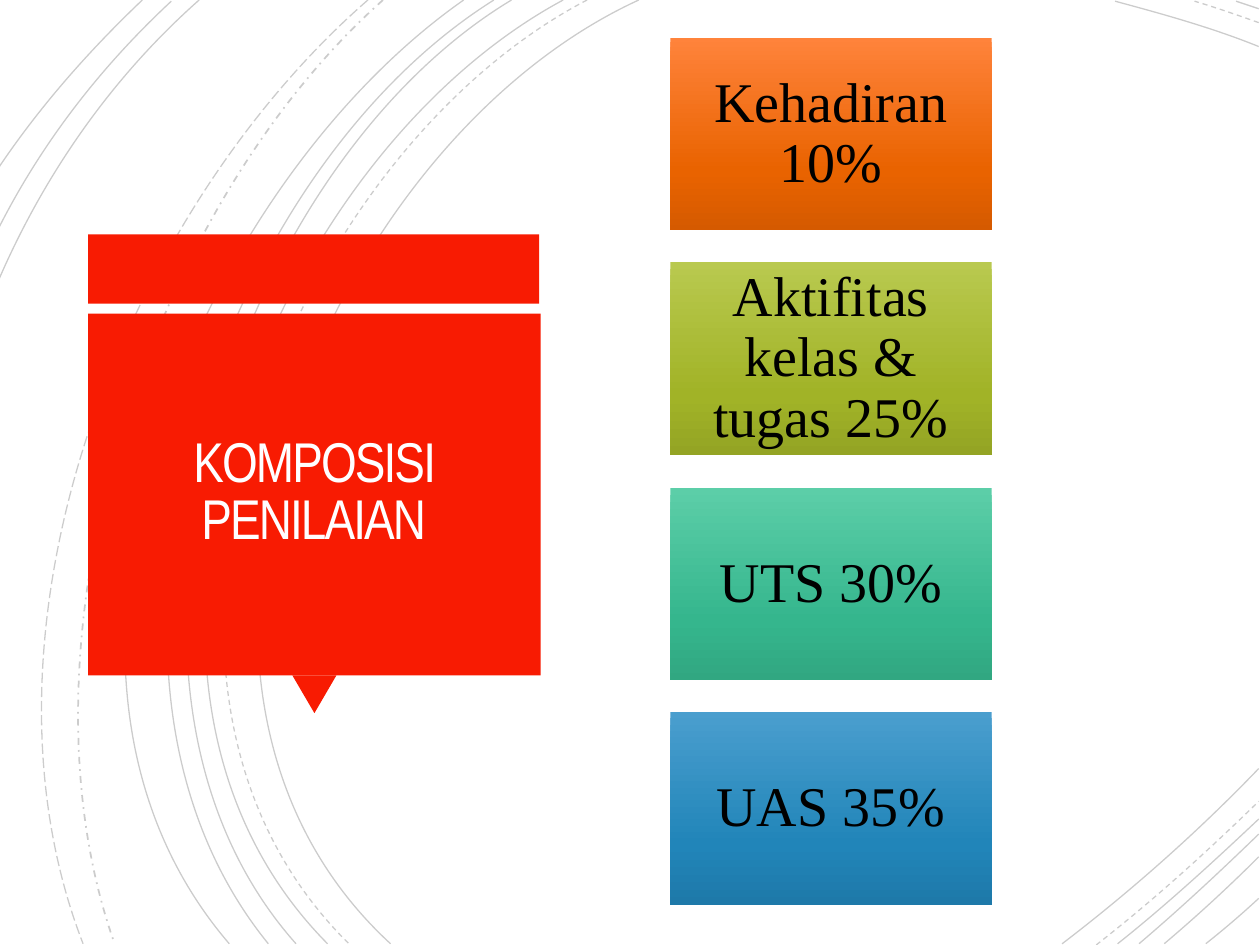
from copy import deepcopy

from lxml.etree import SubElement
from pptx import Presentation
from pptx.dml.color import RGBColor
from pptx.enum.dml import MSO_LINE
from pptx.enum.shapes import MSO_SHAPE
from pptx.enum.text import MSO_ANCHOR, PP_ALIGN
from pptx.oxml.ns import qn
from pptx.util import Pt

PX = 9144
COLORS = {"arc": "000000", "panel": "F81B02", "title": "FFFEFF", "text": "000000"}
SOLID, DASH = MSO_LINE.SOLID, MSO_LINE.DASH
DASH_DOT, LONG_DASH = MSO_LINE.DASH_DOT, MSO_LINE.LONG_DASH

ARCS = [
    (SOLID, 0.75, (507, 0), (256, 115), (83, 540), (310, 749)),
    (SOLID, 0.75, (999, 37), (962, 22), (922, 11), (885, 1)),
    (SOLID, 0.75, (843, 749), (898, 707), (951, 660), (999, 610)),
    (DASH, 0.75, (466, 0), (226, 125), (63, 538), (277, 749)),
    (DASH, 0.75, (999, 18), (982, 12), (965, 6), (948, 1)),
    (DASH, 0.75, (870, 750), (915, 715), (958, 676), (999, 636)),
    (SOLID, 0.75, (447, 0), (211, 127), (50, 537), (260, 749)),
    (SOLID, 0.75, (999, 7), (993, 5), (987, 3), (981, 1)),
    (SOLID, 0.75, (887, 749), (926, 718), (963, 684), (999, 650)),
    (SOLID, 0.75, (406, 0), (185, 133), (50, 541), (235, 749)),
    (SOLID, 0.75, (904, 749), (937, 721), (968, 692), (999, 662)),
    (SOLID, 0.75, (392, 0), (172, 138), (38, 534), (213, 749)),
    (SOLID, 0.75, (924, 749), (950, 727), (975, 704), (999, 680)),
    (SOLID, 0.75, (368, 0), (158, 147), (-7, 529), (182, 749)),
    (SOLID, 0.75, (957, 749), (971, 738), (985, 726), (999, 713)),
    (DASH_DOT, 1, (304, 0), (117, 166), (6, 509), (91, 749)),
    (LONG_DASH, 0.75, (292, 0), (98, 169), (-31, 499), (66, 749)),
    (SOLID, 0.75, (158, 0), (88, 62), (35, 139), (-1, 222)),
    (SOLID, 0.75, (136, 1), (79, 54), (33, 114), (-1, 181)),
    (SOLID, 0.75, (113, 0), (71, 40), (32, 84), (-1, 133)),
]
CARDS = [
    ("Kehadiran 10%", ("FF833B", "E96300", "D55A00")),
    ("Aktifitas kelas & tugas 25%", ("B9C94F", "A1B327", "94A424")),
    ("UTS 30%", ("5CCEA8", "35B68D", "31A781")),
    ("UAS 35%", ("4A9ECE", "2185B9", "1E79A9")),
]


class SlideBuilder:
    """Draws styled elements on the current slide, with lengths in px."""

    def __init__(self, slide):
        self.s = slide

    def arc(self, dash, width, start, *points):
        builder = self.s.shapes.build_freeform(*start, scale=PX)
        builder.add_line_segments(points, close=False)
        sp = builder.convert_to_shape()
        sp.shadow.inherit = False
        sp.fill.background()
        sp.line.color.rgb = RGBColor.from_string(COLORS["arc"])
        sp.line.width = Pt(width)
        sp.line.dash_style = dash
        color = sp._element.xpath(".//a:ln//a:srgbClr")[0]
        SubElement(color, qn("a:alpha")).set("val", "20000")
        path = sp._element.xpath(".//a:path")[0]
        curve = SubElement(path, qn("a:cubicBezTo"))
        for segment in path.findall(qn("a:lnTo")):
            curve.append(segment[0])
            path.remove(segment)

    def shape(self, kind, box, color=None, rotation=0):
        sp = self.s.shapes.add_shape(kind, *(v * PX for v in box))
        sp.shadow.inherit = False
        sp.line.fill.background()
        sp.rotation = rotation
        if color:
            sp.fill.solid()
            sp.fill.fore_color.rgb = RGBColor.from_string(color)
        return sp

    def text(self, sp, text, font, color, inset, spacing):
        tf = sp.text_frame
        frame = {"word_wrap": True, "vertical_anchor": MSO_ANCHOR.MIDDLE}
        for side in ("left", "right", "top", "bottom"):
            frame[f"margin_{side}"] = inset * PX
        for name, value in frame.items():
            setattr(tf, name, value)
        p = tf.paragraphs[0]
        p.alignment = PP_ALIGN.CENTER
        p.line_spacing = spacing
        r = p.add_run()
        r.text = text
        for name, value in {"name": font, "size": Pt(32)}.items():
            setattr(r.font, name, value)
        r.font.color.rgb = RGBColor.from_string(color)
        return r

    def title(self, box, text):
        sp = self.s.shapes.add_textbox(*(v * PX for v in box))
        r = self.text(sp, text, "Arial Narrow", COLORS["title"], 25, 0.85)
        r.font._element.set("spc", "-110")

    def card(self, box, text, colors):
        sp = self.shape(MSO_SHAPE.RECTANGLE, box)
        sp.fill.gradient()
        sp.fill.gradient_angle = 270
        stops = sp._element.xpath(".//a:gsLst")[0]
        stops.append(deepcopy(stops[-1]))
        for stop, position, color in zip(sp.fill.gradient_stops, (0, 0.69, 1), colors):
            stop.position = position
            stop.color.rgb = RGBColor.from_string(color)
        self.text(sp, text, "Times New Roman", COLORS["text"], 13, 0.9)


def main():
    prs = Presentation()
    prs.slide_width, prs.slide_height = 1000 * PX, 750 * PX
    builder = SlideBuilder(prs.slides.add_slide(prs.slide_layouts[6]))
    for arc in ARCS:
        builder.arc(*arc)
    builder.shape(MSO_SHAPE.RECTANGLE, (70, 186, 358, 55), COLORS["panel"])
    builder.shape(MSO_SHAPE.ISOSCELES_TRIANGLE, (232, 536, 35, 30), COLORS["panel"], 180)
    builder.shape(MSO_SHAPE.RECTANGLE, (70, 249, 359, 287), COLORS["panel"])
    builder.title((79, 257, 340, 270), "KOMPOSISI PENILAIAN")
    for i, (text, colors) in enumerate(CARDS):
        builder.card((532, round(30 + i * 178.4), 255, 153), text, colors)
    prs.save("out.pptx")


if __name__ == "__main__":
    main()
